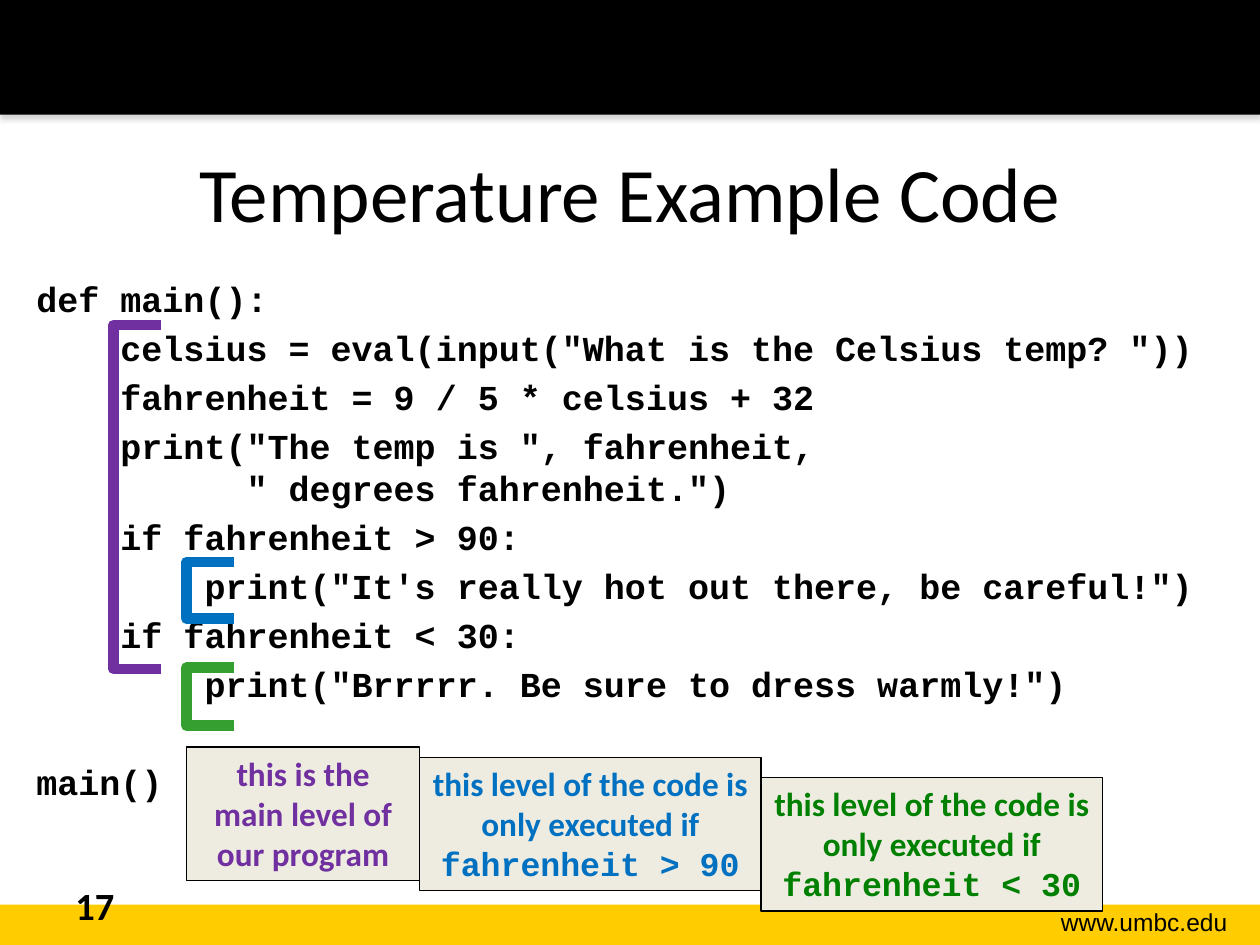
from dataclasses import dataclass

from lxml import etree
from pptx import Presentation
from pptx import util as u
from pptx.dml.color import RGBColor
from pptx.enum import shapes, text
from pptx.oxml.ns import qn

PX = 9144  # EMU per px, 100 px to the inch


@dataclass(frozen=True)
class Theme:
    black: str = "000000"
    gold: str = "FFCC00"
    cream: str = "EEECE1"
    shadow: str = "808080"
    purple: str = "7030A0"
    blue: str = "0070C0"
    bracket_green: str = "35A030"
    label_green: str = "008000"
    sans: str = "Calibri"
    mono: str = "Courier New"
    footer: str = "Arial"
    title_size: int = 44
    number_size: int = 22
    code_size: int = 20
    label_size: int = 19
    footer_size: int = 14
    code_line: int = 24
    code_gap: int = 4


def color(value):
    return RGBColor.from_string(value)


def add_span(para, words, *, size, font, ink, bold=False):
    """Add one formatted run to a paragraph."""
    span = para.add_run()
    span.text = words
    span.font.size = u.Pt(size)
    span.font.name = font
    span.font.bold = bold
    span.font.color.rgb = color(ink)


class Page:
    def __init__(self, deck, theme):
        self.theme = theme
        self.slide = deck.slides.add_slide(deck.slide_layouts[5])

    def title(self, words, *place):
        box = self.slide.shapes.title
        box.left, box.top, box.width, box.height = (n * PX for n in place)
        box.text_frame.vertical_anchor = text.MSO_ANCHOR.MIDDLE
        para = box.text_frame.paragraphs[0]
        para.alignment = text.PP_ALIGN.CENTER
        add_span(para, words, size=self.theme.title_size,
                 font=self.theme.sans, ink=self.theme.black)

    def shape(self, kind, *place, fill=None, line=None, weight=0.75):
        item = self.slide.shapes.add_shape(kind, *(n * PX for n in place))
        item.shadow.inherit = False
        if fill:
            item.fill.solid()
            item.fill.fore_color.rgb = color(fill)
        else:
            item.fill.background()
        if line:
            item.line.color.rgb = color(line)
            item.line.width = u.Pt(weight)
        else:
            item.line.fill.background()
        return item

    def bar(self, *place, fill):
        return self.shape(shapes.MSO_SHAPE.RECTANGLE, *place, fill=fill)

    def drop_shadow(self, item):
        effects = item._element.spPr.find(qn("a:effectLst"))
        shadow = etree.SubElement(
            effects, qn("a:outerShdw"), blurRad=str(u.Pt(3.1)),
            dist=str(u.Pt(1.8)), dir="5400000", rotWithShape="0")
        tint = etree.SubElement(shadow, qn("a:srgbClr"), val=self.theme.shadow)
        etree.SubElement(tint, qn("a:alpha"), val="35000")

    def bracket(self, *place, line):
        item = self.shape(shapes.MSO_SHAPE.LEFT_BRACKET, *place,
                          line=line, weight=6)
        item.adjustments[0] = 0

    def text_box(self, *place):
        box = self.slide.shapes.add_textbox(*(n * PX for n in place))
        box.text_frame.word_wrap = True
        return box.text_frame

    def line_of_text(self, words, *place, align=text.PP_ALIGN.LEFT, **style):
        para = self.text_box(*place).paragraphs[0]
        para.alignment = align
        add_span(para, words, **style)

    def code(self, blocks, *place):
        """Each block is a list of statements; blocks are one line apart."""
        theme = self.theme
        frame = self.text_box(*place)
        step = theme.code_line + theme.code_gap
        for b, block in enumerate(blocks):
            for s, statement in enumerate(block):
                first = b == s == 0
                para = frame.paragraphs[0] if first else frame.add_paragraph()
                para.line_spacing = u.Pt(theme.code_line)
                if not first:
                    blank = step if s == 0 else 0
                    para.space_before = u.Pt(theme.code_gap + blank)
                for n, row in enumerate(statement.split("\n")):
                    if n:
                        para.add_line_break()
                    add_span(para, row, size=theme.code_size,
                             font=theme.mono, ink=theme.black, bold=True)

    def label(self, words, condition, *place, ink):
        theme = self.theme
        box = self.shape(shapes.MSO_SHAPE.RECTANGLE, *place,
                         fill=theme.cream, line=theme.black)
        frame = box.text_frame
        frame.word_wrap = True
        frame.auto_size = text.MSO_AUTO_SIZE.SHAPE_TO_FIT_TEXT
        frame.vertical_anchor = text.MSO_ANCHOR.TOP
        para = frame.paragraphs[0]
        para.alignment = text.PP_ALIGN.CENTER
        for part, font in ((words, theme.sans), (condition, theme.mono)):
            if part:
                add_span(para, part, size=theme.label_size, font=font,
                         ink=ink, bold=True)


CODE = [
    [
        "def main():",
        '    celsius = eval(input("What is the Celsius temp? "))',
        "    fahrenheit = 9 / 5 * celsius + 32",
        '    print("The temp is ", fahrenheit, \n          " degrees fahrenheit.")',
        "    if fahrenheit > 90:",
        '        print("It\'s really hot out there, be careful!")',
        "    if fahrenheit < 30:",
        '        print("Brrrrr. Be sure to dress warmly!")',
    ],
    ["main()"],
]


def main():
    deck = Presentation()
    deck.slide_width, deck.slide_height = 1000 * PX, 750 * PX
    theme = Theme()
    page = Page(deck, theme)

    # Header and footer
    page.bar(0, 718, 1000, 32, fill=theme.gold)
    page.drop_shadow(page.bar(0, 0, 1000, 91, fill=theme.black))
    page.line_of_text("www.umbc.edu", 785, 715, 199, 34,
                      align=text.PP_ALIGN.RIGHT, size=theme.footer_size,
                      font=theme.footer, ink=theme.black)

    # Title, code and page number
    page.title("Temperature Example Code", 50, 90, 900, 125)
    page.code(CODE, 19, 215, 955, 455)
    page.line_of_text("17", 50, 695, 233, 40, size=theme.number_size,
                      font=theme.sans, ink=theme.black, bold=True)

    # Brackets around each level of the code
    page.bracket(90, 258, 38, 273, line=theme.purple)
    page.bracket(148, 446, 38, 45, line=theme.blue)
    page.bracket(148, 530, 38, 46, line=theme.bracket_green)

    # Labels, side by side
    nested = "this level of the code is only executed if "
    labels = [
        ("this is the main level of our program", "", 593, 185, theme.purple),
        (nested, "fahrenheit > 90", 601, 271, theme.blue),
        (nested, "fahrenheit < 30", 617, 271, theme.label_green),
    ]
    left = 148
    for words, condition, top, width, ink in labels:
        page.label(words, condition, left, top, width, 106, ink=ink)
        left += width

    deck.save("out.pptx")


if __name__ == "__main__":
    main()
